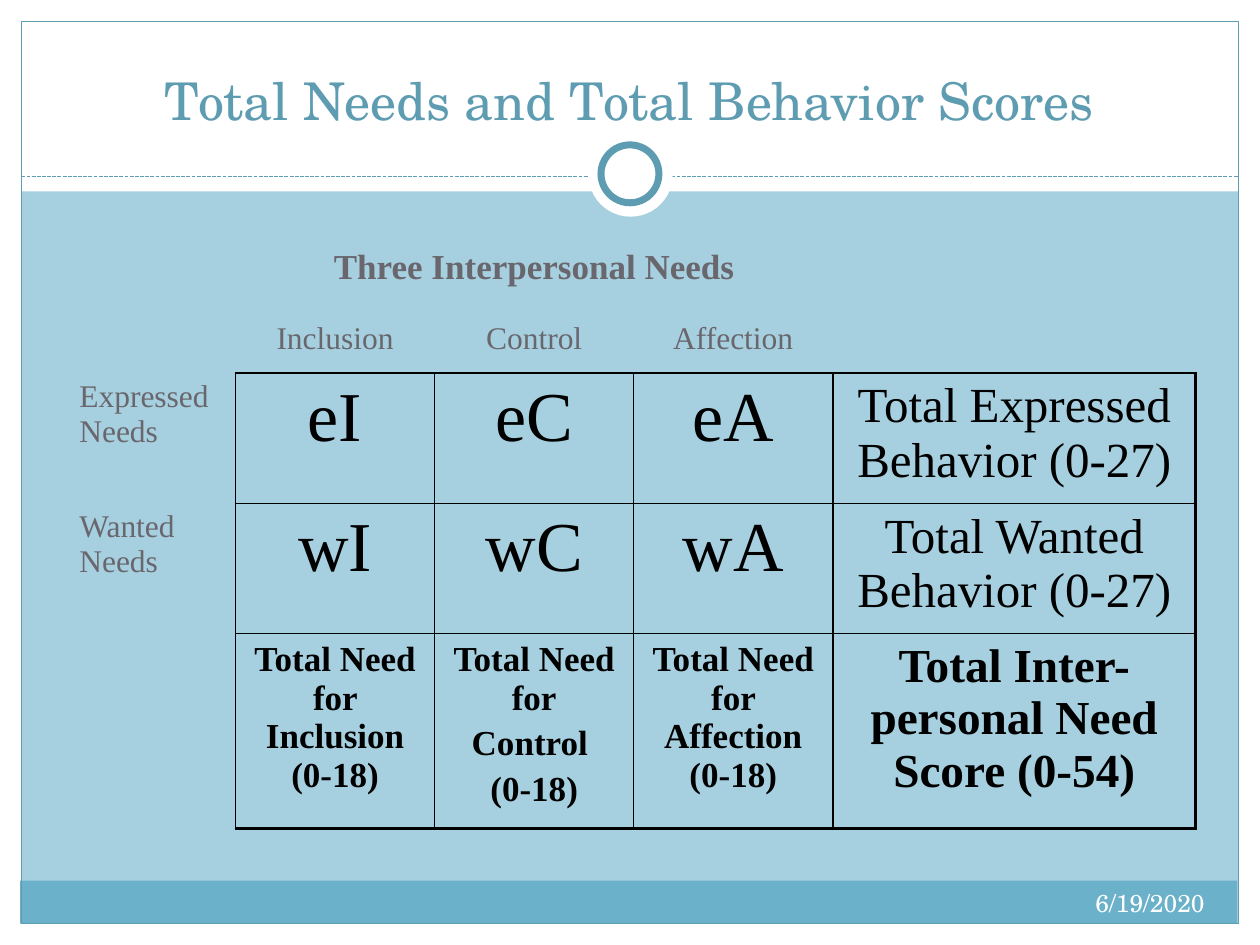
from dataclasses import dataclass

from lxml.etree import SubElement
from pptx import Presentation
from pptx.dml.color import RGBColor
from pptx.enum.dml import MSO_LINE
from pptx.enum.shapes import MSO_CONNECTOR, MSO_SHAPE
from pptx.enum.text import MSO_ANCHOR, PP_ALIGN
from pptx.oxml.ns import qn
from pptx.util import Inches, Pt


@dataclass(frozen=True)
class Theme:
    background: str = "A6D0DF"
    white: str = "FFFFFF"
    black: str = "000000"
    accent: str = "5E9CB1"
    footer: str = "6BB1C9"
    label: str = "69676D"
    display_font: str = "TeX Gyre Schola"
    table_font: str = "Times New Roman"
    title_size: float = 29.7
    date_size: float = 14
    heading_size: float = 20
    label_size: float = 18
    score_size: float = 40
    total_size: float = 28
    grand_size: float = 27
    thin: float = 1
    thick: float = 2.25


class SlideBuilder:
    def __init__(self, slide, theme):
        self.slide = slide
        self.theme = theme
        fill = slide.background.fill
        fill.solid()
        fill.fore_color.rgb = RGBColor.from_string(theme.background)

    def shape(self, kind, box, fill=None, line=None, width=0.75):
        sp = self.slide.shapes.add_shape(kind, *map(Inches, box))
        sp.shadow.inherit = False
        for part, color in ((sp.fill, fill), (sp.line.fill, line)):
            if color:
                part.solid()
                part.fore_color.rgb = RGBColor.from_string(color)
            else:
                part.background()
        if line:
            sp.line.width = Pt(width)

    def dashed_line(self, start, end):
        sp = self.slide.shapes.add_connector(
            MSO_CONNECTOR.STRAIGHT, *map(Inches, start + end))
        sp.line.color.rgb = RGBColor.from_string(self.theme.accent)
        for name, value in {"width": Pt(0.75),
                            "dash_style": MSO_LINE.SQUARE_DOT}.items():
            setattr(sp.line, name, value)
        SubElement(sp.element.spPr, qn("a:effectLst"))

    def paragraphs(self, tf, lines, size, color, font, align, bold=False):
        tf.word_wrap = True
        for i, line in enumerate(lines):
            p = tf.add_paragraph() if i else tf.paragraphs[0]
            p.alignment = align
            if i:
                p.space_before = Pt(0.2 * size)
            r = p.add_run()
            r.text = line
            for name, value in {"size": Pt(size), "name": font,
                                "bold": bold}.items():
                setattr(r.font, name, value)
            r.font.color.rgb = RGBColor.from_string(color)

    def text(self, box, line, size, color, align, anchor=MSO_ANCHOR.TOP):
        tf = self.slide.shapes.add_textbox(*map(Inches, box)).text_frame
        tf.vertical_anchor = anchor
        self.paragraphs(tf, [line], size, color, self.theme.display_font, align)

    def border(self, cell, side, width):
        tc_pr = cell._tc.get_or_add_tcPr()
        ln = SubElement(tc_pr, qn(f"a:ln{side}"), w=str(int(Pt(width))))
        if width:
            fill = SubElement(ln, qn("a:solidFill"))
            SubElement(fill, qn("a:srgbClr"), val=self.theme.black)
        else:
            SubElement(ln, qn("a:noFill"))

    def score_table(self, box, widths, heights, rows):
        t = self.theme
        table = self.slide.shapes.add_table(
            len(rows), len(widths), *map(Inches, box)).table
        for name in ("first_row", "horz_banding"):
            setattr(table, name, False)
        for col, width in zip(table.columns, widths):
            col.width = Inches(width)
        for row, height in zip(table.rows, heights):
            row.height = Inches(height)
        last_row, last_col = len(rows) - 1, len(widths) - 1
        for i, texts in enumerate(rows):
            for j, lines in enumerate(texts):
                cell = table.cell(i, j)
                scored = i >= 2 and j >= 1
                edges = {
                    "L": t.thin if scored else 0,
                    "R": (t.thick if j == last_col else t.thin)
                    if i >= 2 else 0,
                    "T": t.thin if scored else 0,
                    "B": (t.thick if i == last_row else t.thin)
                    if i >= 1 and j >= 1 else 0,
                }
                for side, width in edges.items():
                    self.border(cell, side, width)
                cell.fill.background()
                if lines:
                    self.paragraphs(
                        cell.text_frame, lines, self.cell_size(i, j),
                        t.black if scored else t.label, t.table_font,
                        PP_ALIGN.CENTER if j else PP_ALIGN.LEFT,
                        i in (0, last_row))
        table.cell(0, 1).merge(table.cell(0, 3))

    def cell_size(self, i, j):
        t = self.theme
        if i == 4:
            return t.grand_size if j == 4 else t.heading_size
        if i == 0:
            return t.heading_size
        if i == 1 or j == 0:
            return t.label_size
        return t.total_size if j == 4 else t.score_size


def main():
    t = Theme()
    prs = Presentation()
    prs.slide_width, prs.slide_height = Inches(10), Inches(7.5)
    s = SlideBuilder(prs.slides.add_slide(prs.slide_layouts[6]), t)

    for box in ((0, 7.33, 10, 0.17), (0, 0, 10, 1.52),
                (0, 0, 0.17, 7.5), (9.83, 0, 0.17, 7.5)):
        s.shape(MSO_SHAPE.RECTANGLE, box, t.white)
    s.shape(MSO_SHAPE.RECTANGLE, (0.16, 6.99, 9.66, 0.34), t.footer)
    s.shape(MSO_SHAPE.RECTANGLE, (0.17, 0.17, 9.66, 7.16), line=t.accent)
    s.dashed_line((0.17, 1.4), (9.83, 1.4))
    s.shape(MSO_SHAPE.OVAL, (4.67, 1.05, 0.67, 0.67), t.white)
    s.shape(MSO_SHAPE.OVAL, (4.77, 1.15, 0.46, 0.46), t.white, t.accent, 4)

    s.text((0.75, 0.67, 8.5, 0.42), "Total Needs and Total Behavior Scores",
           t.title_size, t.accent, PP_ALIGN.CENTER, MSO_ANCHOR.BOTTOM)
    rows = [
        [[], ["Three Interpersonal Needs"], [], [], []],
        [[], ["Inclusion"], ["Control"], ["Affection"], []],
        [["Expressed Needs"], ["eI"], ["eC"], ["eA"],
         ["Total Expressed Behavior (0-27)"]],
        [["Wanted Needs"], ["wI"], ["wC"], ["wA"],
         ["Total Wanted Behavior (0-27)"]],
        [[], ["Total Need for Inclusion (0-18)"],
         ["Total Need for", "Control ", "(0-18)"],
         ["Total Need for Affection (0-18)"],
         ["Total Inter-personal Need Score (0-54)"]],
    ]
    s.score_table((0.53, 1.92, 8.97, 4.73), (1.34, 1.58, 1.58, 1.58, 2.88),
                  (0.58, 0.46, 0.99, 0.96, 1.17), rows)
    s.text((6.33, 7, 3.33, 0.4), "6/19/2020", t.date_size, t.white,
           PP_ALIGN.RIGHT)
    prs.save("out.pptx")


if __name__ == "__main__":
    main()
